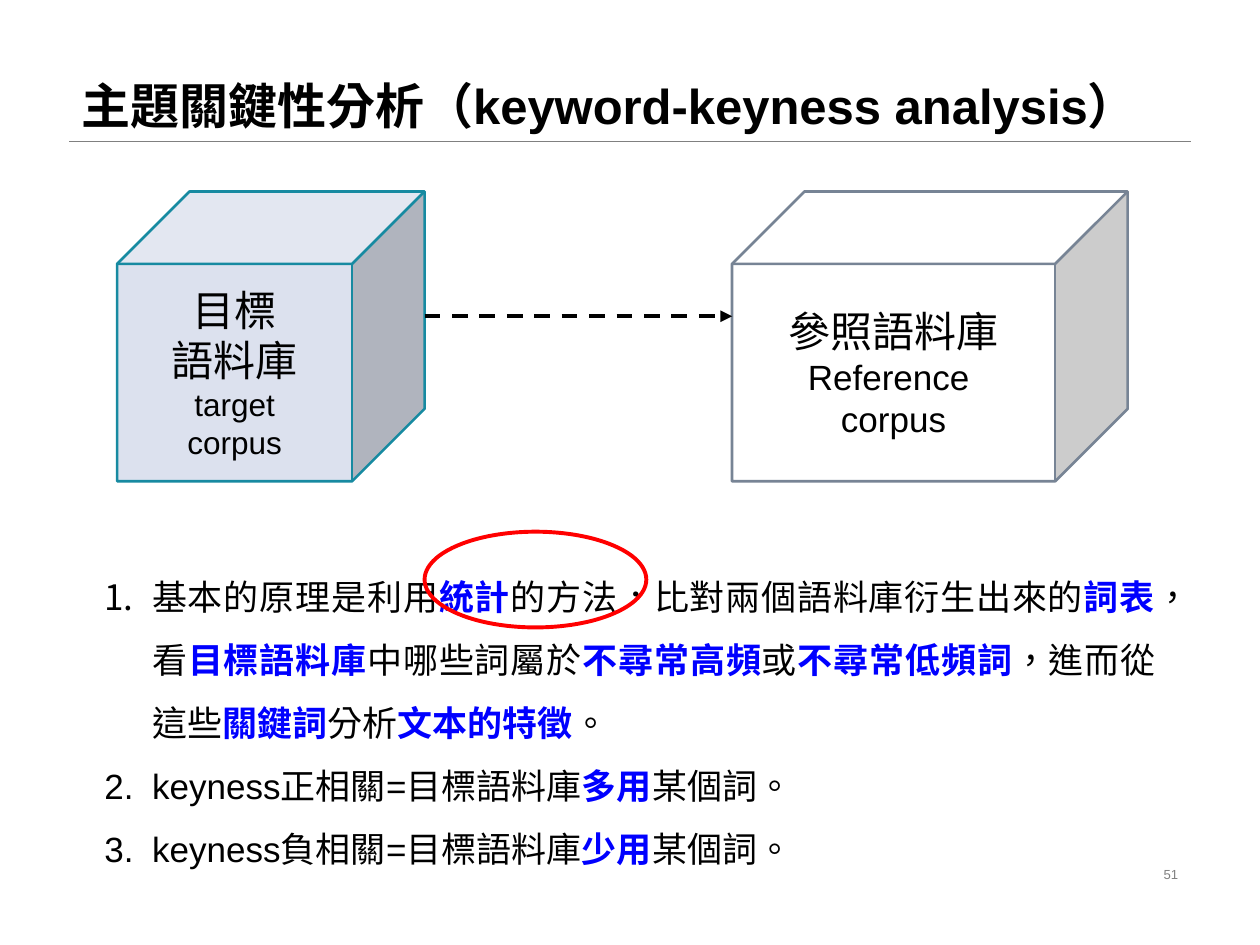
from dataclasses import dataclass

from lxml.etree import SubElement
from pptx import Presentation
from pptx.dml.color import RGBColor
from pptx.enum.dml import MSO_LINE
from pptx.enum.shapes import MSO_CONNECTOR, MSO_SHAPE
from pptx.enum.text import MSO_ANCHOR, PP_ALIGN
from pptx.oxml.ns import qn
from pptx.util import Inches, Pt


@dataclass(frozen=True)
class Theme:
    latin: str = "Arial"
    cjk: str = "Noto Sans CJK SC"
    text: str = "000000"
    accent: str = "0000FF"
    muted: str = "808080"
    ring: str = "FF0000"
    target: tuple = ("DCE1EE", "178AA1")
    reference: tuple = ("FFFFFF", "778495")
    title_size: float = 28
    cube_size: float = 24
    target_size: float = 18
    body_size: float = 20
    number_size: float = 7.5


T = Theme()


def apply(obj, fmt):
    for name, value in fmt.items():
        setattr(obj, name, value)


def lengths(box):
    return [Inches(v) for v in box]


def add_run(p, text, size, color=T.text, bold=False, latin=T.latin):
    r = p.add_run()
    r.text = text
    apply(r.font, {"size": Pt(size), "bold": bold, "name": latin})
    r.font.color.rgb = RGBColor.from_string(color)
    rPr = r.font._element
    rPr.set("lang", "zh-TW")
    SubElement(rPr, qn("a:ea")).set("typeface", T.cjk)


def add_text(s, box, anchor):
    tf = s.shapes.add_textbox(*lengths(box)).text_frame
    apply(tf, {"word_wrap": True, "vertical_anchor": anchor})
    return tf


def add_line(s, start, end, color, width):
    line = s.shapes.add_connector(MSO_CONNECTOR.STRAIGHT, *lengths(start + end))
    line.line.color.rgb = RGBColor.from_string(color)
    line.line.width = Pt(width)
    SubElement(line._element.spPr, qn("a:effectLst"))
    return line


def add_outlined(s, kind, box, color, width):
    sp = s.shapes.add_shape(kind, *lengths(box))
    sp.shadow.inherit = False
    sp.line.color.rgb = RGBColor.from_string(color)
    sp.line.width = Pt(width)
    return sp


def add_title(s, box, text):
    x, y, w, h = box
    add_line(s, (x, y + h), (x + w, y + h), T.muted, 0.25)
    p = add_text(s, box, MSO_ANCHOR.BOTTOM).paragraphs[0]
    p.line_spacing = 0.9
    add_run(p, text, T.title_size, bold=True)


def add_page_number(s, box, text):
    p = add_text(s, box, MSO_ANCHOR.MIDDLE).paragraphs[0]
    p.alignment = PP_ALIGN.RIGHT
    add_run(p, text, T.number_size, T.muted)


def add_cube(s, box, colors, lines):
    fill, outline = colors
    sp = add_outlined(s, MSO_SHAPE.CUBE, box, outline, 1.5)
    sp.fill.solid()
    sp.fill.fore_color.rgb = RGBColor.from_string(fill)
    tf = sp.text_frame
    apply(tf, {"word_wrap": True, "vertical_anchor": MSO_ANCHOR.MIDDLE})
    for i, (text, size) in enumerate(lines):
        p = tf.add_paragraph() if i else tf.paragraphs[0]
        p.alignment = PP_ALIGN.CENTER
        add_run(p, text, size)


def add_corpora(s, box):
    x, y, w, h = box
    target_w, reference_w = 2.44, 3.14
    reference_x = x + w - reference_w
    add_cube(s, (x, y, target_w, h), T.target, [
        ("目標", T.cube_size), ("語料庫", T.cube_size),
        ("target", T.target_size), ("corpus", T.target_size)])
    add_cube(s, (reference_x, y, reference_w, h), T.reference, [
        ("參照語料庫", T.cube_size),
        ("Reference ", T.body_size), ("corpus", T.body_size)])
    arrow_y = y + 0.99
    arrow = add_line(s, (x + target_w, arrow_y), (reference_x, arrow_y), T.text, 2.25)
    arrow.line.dash_style = MSO_LINE.DASH
    SubElement(arrow.line._get_or_add_ln(), qn("a:tailEnd")).set("type", "triangle")


def add_principles(s, box, items):
    tf = add_text(s, box, MSO_ANCHOR.TOP)
    for i, (text, latin) in enumerate(items):
        p = tf.add_paragraph() if i else tf.paragraphs[0]
        apply(p, {"alignment": PP_ALIGN.JUSTIFY, "line_spacing": 1.5})
        pPr = p._p.get_or_add_pPr()
        pPr.set("marL", str(Inches(0.38)))
        pPr.set("indent", str(Inches(-0.38)))
        SubElement(pPr, qn("a:buFont")).set("typeface", "+mj-lt")
        SubElement(pPr, qn("a:buAutoNum")).set("type", "arabicPeriod")
        for j, part in enumerate(text.split("*")):
            key = j % 2 == 1
            add_run(p, part, T.body_size, T.accent if key else T.text, key, latin)


def add_ring(s, box):
    add_outlined(s, MSO_SHAPE.OVAL, box, T.ring, 2.25).fill.background()


def main():
    prs = Presentation()
    apply(prs, {"slide_width": Inches(10), "slide_height": Inches(7.5)})
    s = prs.slides.add_slide(prs.slide_layouts[6])
    add_title(s, (0.55, 0, 8.9, 1.12), "主題關鍵性分析（keyword-keyness analysis）")
    add_page_number(s, (7.06, 6.82, 2.39, 0.23), "51")
    add_corpora(s, (0.93, 1.52, 8.02, 2.3))
    add_principles(s, (0.73, 4.35, 8.54, 2.63), [
        ("基本的原理是利用*統計*的方法，比對兩個語料庫衍生出來的*詞表*，看*目標語料庫*"
         "中哪些詞屬於*不尋常高頻*或*不尋常低頻詞*，進而從這些*關鍵詞*分析*文本的特徵*。", T.cjk),
        ("keyness正相關=目標語料庫*多用*某個詞。", T.latin),
        ("keyness負相關=目標語料庫*少用*某個詞。", T.latin)])
    add_ring(s, (3.37, 4.22, 1.76, 0.76))
    prs.save("out.pptx")


if __name__ == "__main__":
    main()
